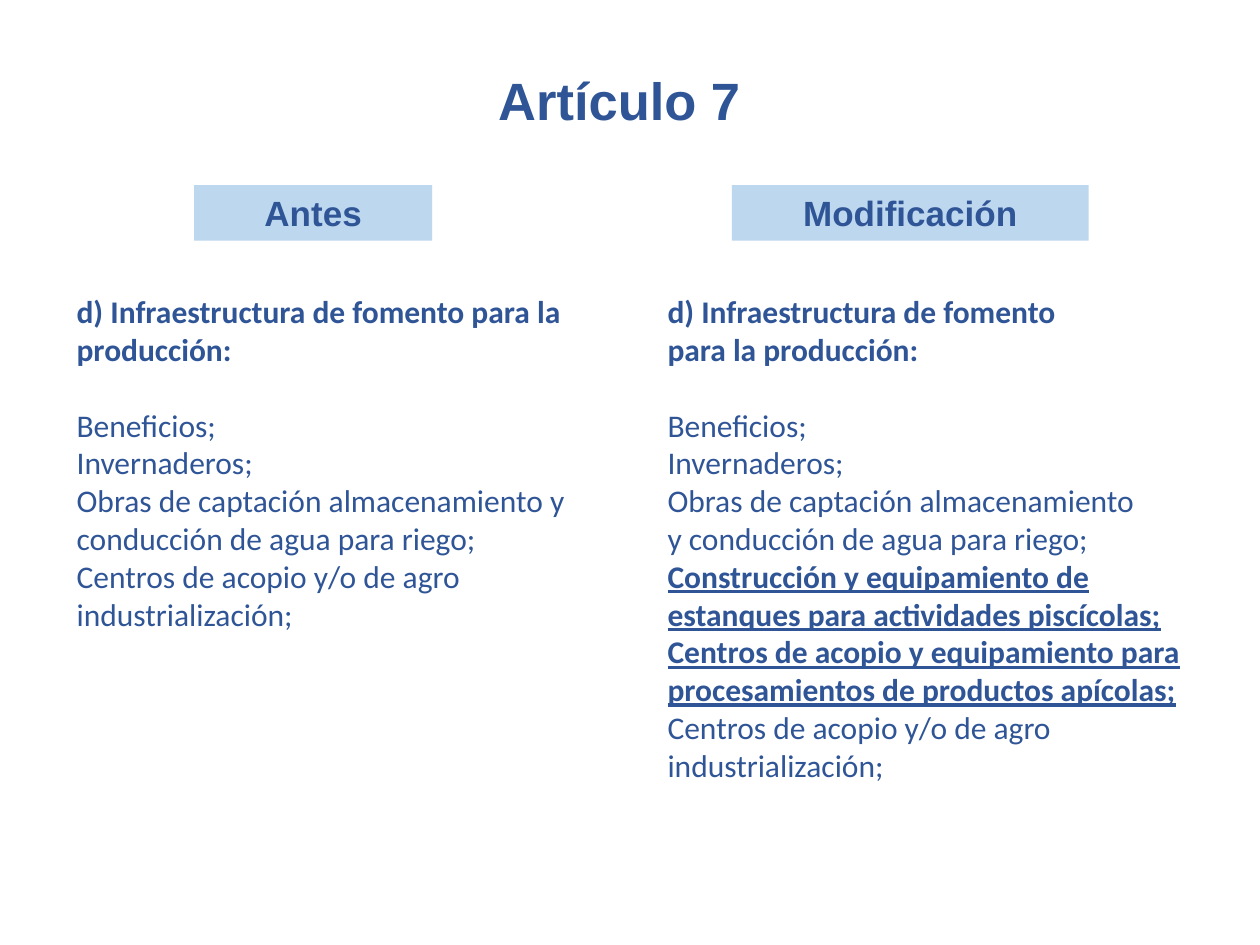
import pptx
import pptx.util
from pptx.dml.color import RGBColor
from pptx.enum.shapes import MSO_SHAPE
from pptx.enum.text import MSO_ANCHOR, PP_ALIGN
from pptx.util import Inches, Pt

COLORS = {"text": "2F5597", "label": "BDD7EE"}
HEADING = {"bold": True}
ADDED = {"bold": True, "underline": True}
AFTER_HEADING = {"space_before": 21.6}

BEFORE = [
    ("d) Infraestructura de fomento para la producción:", HEADING),
    ("Beneficios;", AFTER_HEADING),
    ("Invernaderos;", {}),
    ("Obras de captación almacenamiento y conducción de agua para riego;", {}),
    ("Centros de acopio y/o de agro industrialización;", {}),
]
AFTER = [
    ("d) Infraestructura de fomento", HEADING),
    ("para la producción:", HEADING),
    ("Beneficios;", AFTER_HEADING),
    ("Invernaderos;", {}),
    ("Obras de captación almacenamiento", {}),
    ("y conducción de agua para riego;", {}),
    ("Construcción y equipamiento de estanques para actividades piscícolas;", ADDED),
    ("Centros de acopio y equipamiento para procesamientos de productos apícolas;", ADDED),
    ("Centros de acopio y/o de agro industrialización;", {}),
]


def write(p, text, font="Calibri", size=18, bold=False, underline=False,
          align=PP_ALIGN.LEFT, space_before=0):
    p.alignment = align
    p.space_before = Pt(space_before)
    r = p.add_run()
    r.text = text
    r.font.name = font
    r.font.size = Pt(size)
    r.font.bold = bold
    r.font.underline = underline
    r.font.color.rgb = RGBColor.from_string(COLORS["text"])


def add_text_box(slide, left, top, width, height):
    sp = slide.shapes.add_textbox(Inches(left), Inches(top), Inches(width), Inches(height))
    sp.text_frame.word_wrap = True
    return sp.text_frame


def add_title(slide, text, left, top, width, height):
    tf = add_text_box(slide, left, top, width, height)
    write(tf.paragraphs[0], text, font="Arial", size=30, bold=True, align=PP_ALIGN.CENTER)


def add_label(slide, text, left, top, width, height):
    sp = slide.shapes.add_shape(MSO_SHAPE.RECTANGLE, Inches(left), Inches(top),
                                Inches(width), Inches(height))
    sp.shadow.inherit = False
    sp.fill.solid()
    sp.fill.fore_color.rgb = RGBColor.from_string(COLORS["label"])
    sp.line.fill.background()
    tf = sp.text_frame
    tf.word_wrap = True
    tf.vertical_anchor = MSO_ANCHOR.MIDDLE
    write(tf.paragraphs[0], text, font="Arial", size=20, bold=True, align=PP_ALIGN.CENTER)


def add_column(slide, label, lines, left, top, width, height, label_offset, label_width):
    """Place a label with its list of provisions below it."""
    label_height, body_offset = 0.44, 0.8
    add_label(slide, label, left + label_offset, top, label_width, label_height)
    tf = add_text_box(slide, left, top + body_offset, width, height - body_offset)
    for i, (text, style) in enumerate(lines):
        p = tf.paragraphs[0] if i == 0 else tf.add_paragraph()
        write(p, text, **style)


def main():
    prs = pptx.Presentation()
    prs.slide_width, prs.slide_height = Inches(10), Inches(7.5)
    slide = prs.slides.add_slide(prs.slide_layouts[6])
    add_title(slide, "Artículo 7", 3.29, 0.49, 3.25, 0.61)
    add_column(slide, "Antes", BEFORE, 0.51, 1.47, 4.18, 4.69,
               label_offset=1.03, label_width=1.89)
    add_column(slide, "Modificación", AFTER, 5.2, 1.47, 4.36, 5.21,
               label_offset=0.61, label_width=2.83)
    prs.save("out.pptx")


if __name__ == "__main__":
    main()
